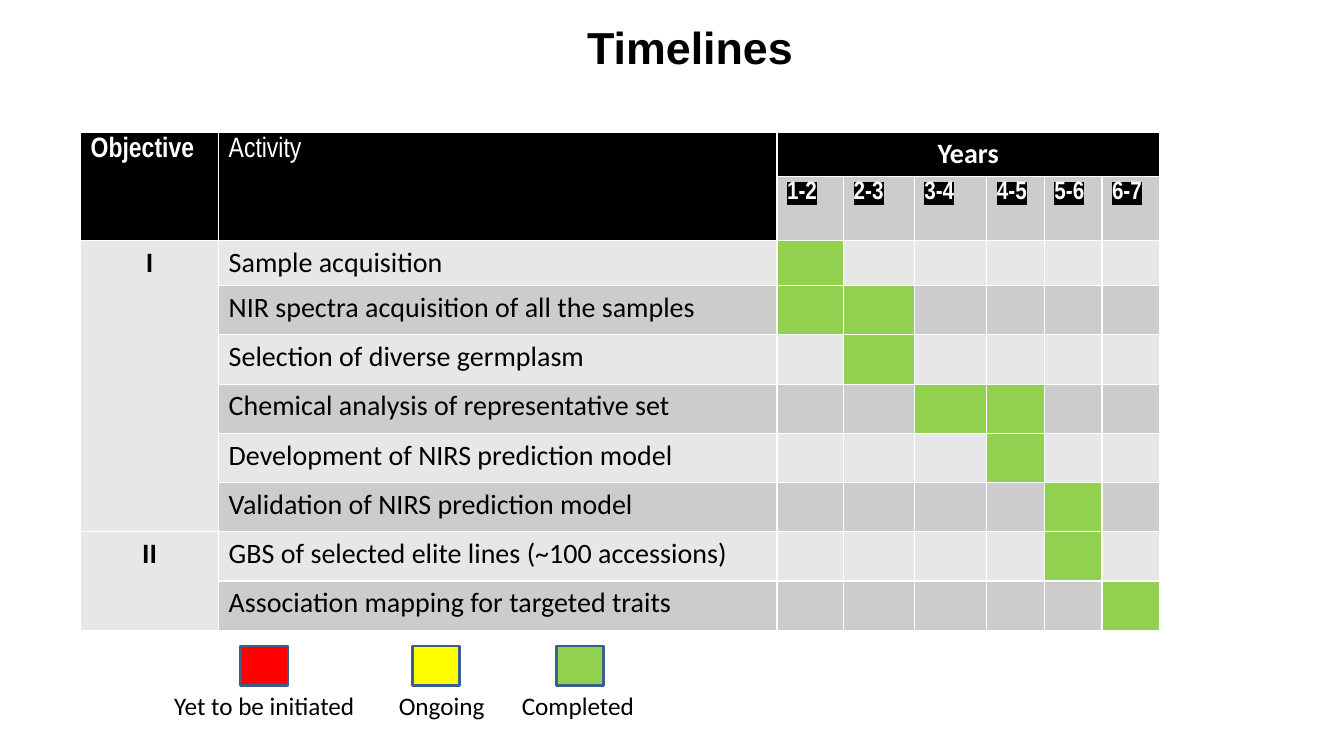
"""Build the project timelines slide."""
from lxml import etree
from pptx import Presentation
from pptx.dml.color import RGBColor
from pptx.enum.shapes import MSO_SHAPE
from pptx.enum.text import MSO_ANCHOR, PP_ALIGN
from pptx.oxml.ns import qn
from pptx.util import Cm, Pt

RECTANGLE = MSO_SHAPE.RECTANGLE
MIDDLE = MSO_ANCHOR.MIDDLE
LEFT, CENTER = PP_ALIGN.LEFT, PP_ALIGN.CENTER

COLOURS = {
    "black": "000000", "white": "FFFFFF", "light": "E7E7E7", "dark": "CCCCCC",
    "pending": "FF0000", "ongoing": "FFFF00", "done": "92D050", "outline": "3A5F8C",
}
COLUMN_WIDTHS = [3.48, 14.07, 1.68, 1.78, 1.83, 1.45, 1.45, 1.45]
ROW_HEIGHTS = [1.12, 1.62, 1.13] + [1.24] * 7
YEARS = ["1-2", "2-3", "3-4", "4-5", "5-6", "6-7"]
ACTIVITIES = [
    ("Sample acquisition", ["1-2"]),
    ("NIR spectra acquisition of all the samples", ["1-2", "2-3"]),
    ("Selection of diverse germplasm", ["2-3"]),
    ("Chemical analysis of representative set", ["3-4", "4-5"]),
    ("Development of NIRS prediction model", ["4-5"]),
    ("Validation of NIRS prediction model", ["5-6"]),
    ("GBS of selected elite lines (~100 accessions)", ["5-6"]),
    ("Association mapping for targeted traits", ["6-7"]),
]
OBJECTIVES = [("I", 2, 7), ("II", 8, 9)]
LEGEND = [
    ("Yet to be initiated", "pending", 6.07, 4.14, 5.51),
    ("Ongoing", "ongoing", 10.39, 9.8, 2.77),
    ("Completed", "done", 14.02, 12.9, 3.58),
]


def colour(name):
    """Return the named colour."""
    return RGBColor.from_string(COLOURS[name])


def write(frame, text, size, font="Calibri", ink="black", bold=False, align=LEFT):
    """Write one run into the first paragraph of a frame and return it."""
    para = frame.paragraphs[0]
    para.alignment = align
    span = para.add_run()
    span.text = text
    span.font.size = Pt(size)
    span.font.name = font
    span.font.bold = bold
    span.font.color.rgb = colour(ink)
    return span


def highlight(span, name):
    """Put a highlight colour behind a run."""
    mark = etree.Element(qn("a:highlight"))
    etree.SubElement(mark, qn("a:srgbClr"), val=COLOURS[name])
    span.font._element.find(qn("a:solidFill")).addnext(mark)


def style_cell(cell, fill):
    """Give a cell thin white borders and a fill."""
    properties = cell._tc.get_or_add_tcPr()
    for side in ("a:lnL", "a:lnR", "a:lnT", "a:lnB"):
        line = etree.SubElement(properties, qn(side), w=str(Pt(1)))
        solid = etree.SubElement(line, qn("a:solidFill"))
        etree.SubElement(solid, qn("a:srgbClr"), val=COLOURS["white"])
    cell.fill.solid()
    cell.fill.fore_color.rgb = colour(fill)


def add_label(page, text, left, top, width, height, size, **style):
    """Add a text box holding one run and return its frame."""
    box = page.shapes.add_textbox(Cm(left), Cm(top), Cm(width), Cm(height))
    frame = box.text_frame
    frame.word_wrap = True
    write(frame, text, size, **style)
    return frame


def add_swatch(page, fill, left):
    """Add one legend rectangle."""
    swatch = page.shapes.add_shape(RECTANGLE, Cm(left), Cm(16.28), Cm(1.19), Cm(0.99))
    swatch.shadow.inherit = False
    swatch.fill.solid()
    swatch.fill.fore_color.rgb = colour(fill)
    swatch.line.color.rgb = colour("outline")
    swatch.line.width = Pt(2)


def fill_headers(table):
    """Fill the two header rows."""
    for column, (text, bold) in enumerate([("Objective", True), ("Activity", False)]):
        cell = table.cell(0, column)
        cell.merge(table.cell(1, column))
        write(cell.text_frame, text, 20, "Arial Narrow", "white", bold)
        for row in range(2):
            style_cell(table.cell(row, column), "black")
    years = table.cell(0, 2)
    years.merge(table.cell(0, 7))
    write(years.text_frame, "Years", 20, ink="white", bold=True, align=CENTER)
    for column, year in enumerate(YEARS, 2):
        style_cell(table.cell(0, column), "black")
        cell = table.cell(1, column)
        style_cell(cell, "dark")
        highlight(write(cell.text_frame, year, 18, "Arial Narrow", "white", True), "black")


def fill_activities(table):
    """Fill the objectives, the activities and their years."""
    for text, first, last in OBJECTIVES:
        cell = table.cell(first, 0)
        cell.merge(table.cell(last, 0))
        write(cell.text_frame, text, 20, bold=True, align=CENTER)
    for row, (activity, active_years) in enumerate(ACTIVITIES, 2):
        band = "dark" if row % 2 else "light"
        style_cell(table.cell(row, 0), "light")
        style_cell(table.cell(row, 1), band)
        write(table.cell(row, 1).text_frame, activity, 20)
        for column, year in enumerate(YEARS, 2):
            style_cell(table.cell(row, column), "done" if year in active_years else band)


def add_timeline(page):
    """Add the table of activities by year."""
    frame = page.shapes.add_table(
        len(ROW_HEIGHTS), len(COLUMN_WIDTHS), Cm(2.03), Cm(3.33),
        Cm(sum(COLUMN_WIDTHS)), Cm(sum(ROW_HEIGHTS)))
    table = frame.table
    for column, width in zip(table.columns, COLUMN_WIDTHS):
        column.width = Cm(width)
    for row, height in zip(table.rows, ROW_HEIGHTS):
        row.height = Cm(height)
    fill_headers(table)
    fill_activities(table)


def main():
    """Build and save the deck."""
    deck = Presentation()
    deck.slide_width, deck.slide_height = Cm(33.87), Cm(19.05)
    page = deck.slides.add_slide(deck.slide_layouts[6])
    title = add_label(page, "Timelines", 4.98, 0.58, 24.82, 1.19, 32,
                      font="Arial", bold=True, align=CENTER)
    title.vertical_anchor = MIDDLE
    add_timeline(page)
    for text, fill, swatch_left, label_left, width in LEGEND:
        add_swatch(page, fill, swatch_left)
        add_label(page, text, label_left, 17.27, width, 1.03, 18)
    deck.save("out.pptx")


if __name__ == "__main__":
    main()
